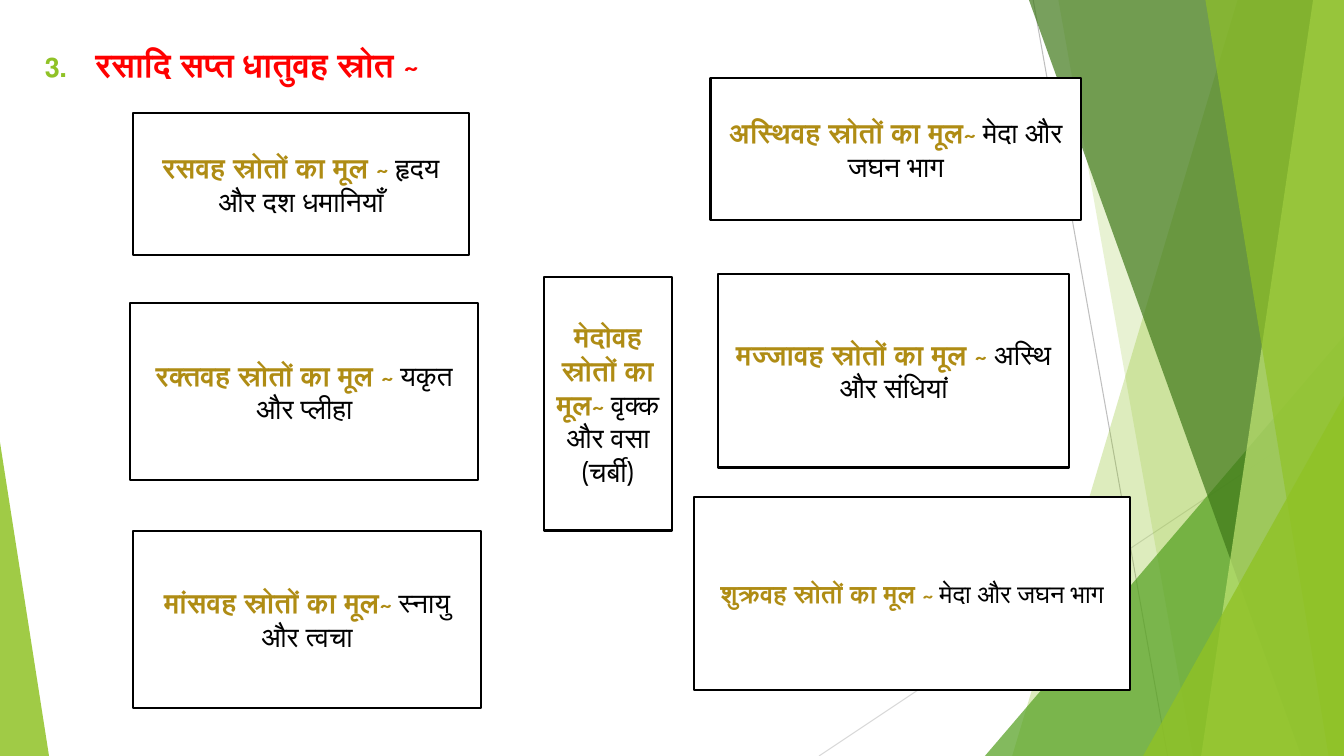
from lxml import etree
from pptx import Presentation
from pptx.dml.color import RGBColor
from pptx.enum.shapes import MSO_CONNECTOR, MSO_SHAPE
from pptx.enum.text import MSO_ANCHOR, PP_ALIGN
from pptx.oxml.ns import qn
from pptx.util import Pt

RECTANGLE = MSO_SHAPE.RECTANGLE
TRIANGLE = MSO_SHAPE.ISOSCELES_TRIANGLE
STRAIGHT = MSO_CONNECTOR.STRAIGHT
MIDDLE = MSO_ANCHOR.MIDDLE
CENTER = PP_ALIGN.CENTER

WIDTH, HEIGHT = 960, 540
FONT = "Cabin"
GREEN, RED, GOLD, BLACK, WHITE = "90C226", "FF0000", "AF8C14", "000000", "FFFFFF"

# x1, y1, x2, y2, colour
HAIRLINES = [
    (738, 0, 834, 540, "BFBFBF"),
    (960, 290, 585, 540, "D9D9D9"),
]
# top-left x, bottom-left x, colour, opacity; each band runs to the right edge
BACK_BANDS = [(884, 723, GREEN, 30), (756, 852, GREEN, 20)]
FRONT_BANDS = [
    (735, 929.5, "3F7819", 70),
    (938, 858, "C0E474", 70),
    (861, 949, GREEN, 65),
]

# left, top, width, height, text size, channel, its roots
CHANNELS = [
    (95, 81, 240, 101, 20, "रसवह स्रोतों का मूल ~ ", "हृदय और दश धमानियाँ"),
    (93, 216.5, 248.5, 126.5, 20, "रक्तवह स्रोतों का मूल ~ ", "यकृत और प्लीहा"),
    (95, 379, 248.5, 126.5, 20, "मांसवह स्रोतों का मूल~ ", "स्नायु और त्वचा"),
    (388.5, 198, 91.5, 181, 20, "मेदोवह स्रोतों का मूल~ ", "वृक्क और वसा (चर्बी)"),
    (507.5, 56, 265, 101, 20, "अस्थिवह स्रोतों का मूल~ ", "मेदा और जघन भाग"),
    (513, 196, 250.5, 138, 20, "मज्जावह स्रोतों का मूल ~ ", "अस्थि और संधियां"),
    (496, 355, 311, 138, 18, "शुक्रवह स्रोतों का मूल ~ ", "मेदा और जघन भाग"),
]


def rgb(colour):
    return RGBColor.from_string(colour)


def paint(shape, colour, opacity=100):
    shape.shadow.inherit = False
    shape.fill.solid()
    shape.fill.fore_color.rgb = rgb(colour)
    shape.line.fill.background()
    if opacity < 100:
        tint = shape.fill._xPr.find(".//" + qn("a:srgbClr"))
        etree.SubElement(tint, qn("a:alpha"), val=str(opacity * 1000))


def add_run(paragraph, text, size, colour, bold=False):
    run = paragraph.add_run()
    run.text = text
    run.font.name = FONT
    run.font.size = Pt(size)
    run.font.bold = bold
    run.font.color.rgb = rgb(colour)


def add_hairline(slide, x1, y1, x2, y2, colour):
    line = slide.shapes.add_connector(STRAIGHT, Pt(x1), Pt(y1), Pt(x2), Pt(y2))
    line.line.color.rgb = rgb(colour)
    line.line.width = Pt(0.75)
    etree.SubElement(line._element.spPr, qn("a:effectLst"))


def add_band(slide, top_x, bottom_x, colour, opacity):
    outline = slide.shapes.build_freeform(Pt(top_x), 0)
    corners = [(WIDTH, 0), (WIDTH, HEIGHT), (bottom_x, HEIGHT)]
    outline.add_line_segments([(Pt(x), Pt(y)) for x, y in corners], close=True)
    paint(outline.convert_to_shape(), colour, opacity)


def add_corner(slide, left, top, width, apex, colour, opacity):
    """Right triangle standing on the bottom edge, apex 0 at left or 1 at right."""
    corner = slide.shapes.add_shape(
        TRIANGLE, Pt(left), Pt(top), Pt(width), Pt(HEIGHT - top))
    corner.adjustments[0] = apex
    paint(corner, colour, opacity)


def add_backdrop(slide):
    for hairline in HAIRLINES:
        add_hairline(slide, *hairline)
    for band in BACK_BANDS:
        add_band(slide, *band)
    add_corner(slide, 703.5, 240, 256.5, 1, "54A021", 72)
    for band in FRONT_BANDS:
        add_band(slide, *band)
    add_corner(slide, 816.5, 283, 143.5, 1, GREEN, 80)
    add_corner(slide, 0, 316, 35, 0, GREEN, 85)


def add_heading(slide, left, top, width, height, number, text):
    frame = slide.shapes.add_textbox(
        Pt(left), Pt(top), Pt(width), Pt(height)).text_frame
    frame.word_wrap = True
    paragraph = frame.paragraphs[0]
    props = paragraph._p.get_or_add_pPr()
    props.set("marL", str(Pt(36)))
    props.set("indent", str(-Pt(36)))
    bullet_colour = etree.SubElement(props, qn("a:buClr"))
    etree.SubElement(bullet_colour, qn("a:srgbClr"), val=GREEN)
    etree.SubElement(props, qn("a:buSzPct"), val="80000")
    etree.SubElement(props, qn("a:buFont"), typeface=FONT)
    etree.SubElement(props, qn("a:buAutoNum"), type="arabicPeriod", startAt=str(number))
    add_run(paragraph, text, 24, RED, bold=True)


def add_channel(slide, left, top, width, height, size, channel, roots):
    box = slide.shapes.add_shape(
        RECTANGLE, Pt(left), Pt(top), Pt(width), Pt(height))
    paint(box, WHITE)
    box.line.color.rgb = rgb(BLACK)
    box.line.width = Pt(1.5)
    frame = box.text_frame
    frame.word_wrap = True
    frame.vertical_anchor = MIDDLE
    paragraph = frame.paragraphs[0]
    paragraph.alignment = CENTER
    add_run(paragraph, channel, size, GOLD, bold=True)
    add_run(paragraph, roots, size, BLACK)


def main():
    deck = Presentation()
    deck.slide_width, deck.slide_height = Pt(WIDTH), Pt(HEIGHT)
    slide = deck.slides.add_slide(deck.slide_layouts[6])
    add_backdrop(slide)
    add_heading(slide, 25, 28, 782, 480, 3, "रसादि सप्त धातुवह स्रोत ~")
    for channel in CHANNELS:
        add_channel(slide, *channel)
    deck.save("out.pptx")


if __name__ == "__main__":
    main()
